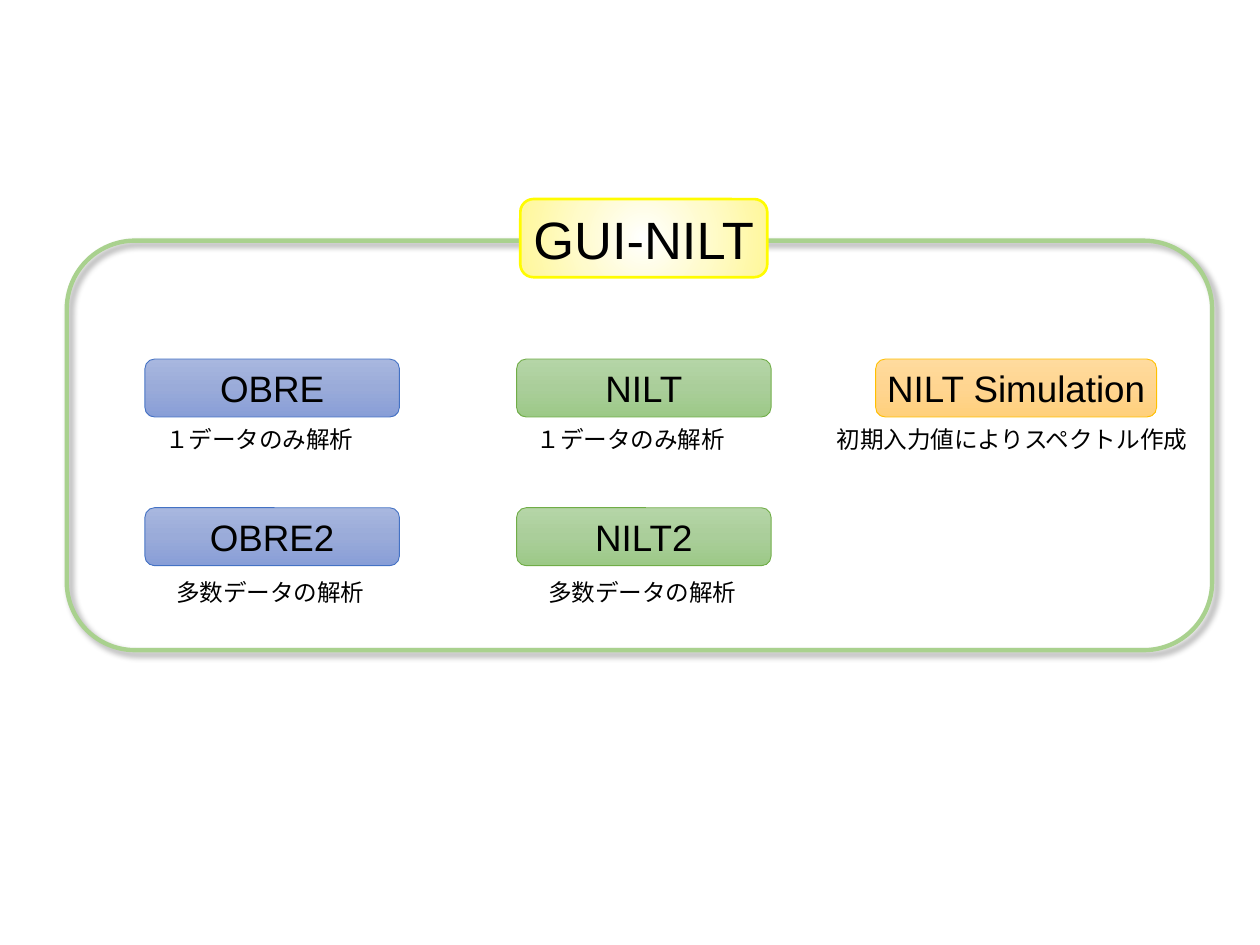
from pptx import Presentation
from pptx.dml.color import RGBColor
from pptx.enum.shapes import MSO_SHAPE
from pptx.enum.text import MSO_ANCHOR, PP_ALIGN
from pptx.oxml import parse_xml
from pptx.oxml.ns import nsdecls, qn
from pptx.util import Inches, Pt

BLACK = RGBColor(0x00, 0x00, 0x00)
FRAME_GREEN = RGBColor(0xA9, 0xD1, 0x8E)
TITLE_LINE = RGBColor(0xFF, 0xFC, 0x00)
TITLE_FILL = [RGBColor.from_string(c) for c in ("FFFFFF", "FFFBCC", "FFF799")]

# Outline colour and gradient of each family of modules
BLUE_STYLE = (RGBColor(0x44, 0x72, 0xC4),
              [RGBColor.from_string(c) for c in ("A8B7DF", "9AABD9", "889ED7")])
GREEN_STYLE = (RGBColor(0x70, 0xAD, 0x47),
               [RGBColor.from_string(c) for c in ("B5D5A7", "AACE9A", "9CC987")])
ORANGE_STYLE = (RGBColor(0xFF, 0xC0, 0x00),
                [RGBColor.from_string(c) for c in ("FFDB9E", "FFD590", "FFD07C")])

# Content
TITLE = "GUI-NILT"
SINGLE = "１データのみ解析"
MULTIPLE = "多数データの解析"
SIMULATED = "初期入力値によりスペクトル作成"
# (column, row, name, note)
MODULES = [
    (0, 0, "OBRE", SINGLE),
    (0, 1, "OBRE2", MULTIPLE),
    (1, 0, "NILT", SINGLE),
    (1, 1, "NILT2", MULTIPLE),
    (2, 0, "NILT Simulation", SIMULATED),
]

# Grid in inches: (left, box width, note width, style) and (top, note top)
COLUMNS = [(1.15, 2.02, 1.51, BLUE_STYLE),
           (4.10, 2.02, 1.51, GREEN_STYLE),
           (6.95, 2.23, 2.84, ORANGE_STYLE)]
ROWS = [(2.85, 3.34), (4.03, 4.56)]
NOTE_SHIFT = {SINGLE: 0.16, MULTIPLE: 0.25, SIMULATED: -0.31}
BOX_HEIGHT, NOTE_HEIGHT, INSET = 0.46, 0.26, 0.03

LINEAR = '<a:lin ang="5400000" scaled="0"/>'
RADIAL = ('<a:path path="circle"><a:fillToRect l="50000" t="50000" '
          'r="50000" b="50000"/></a:path>')

prs = Presentation()
prs.slide_width, prs.slide_height = Inches(10), Inches(7.5)
slide = prs.slides.add_slide(prs.slide_layouts[6])


def add_rounded(left, top, width, height, line_color, line_width):
    shape = slide.shapes.add_shape(MSO_SHAPE.ROUNDED_RECTANGLE,
                                   *map(Inches, (left, top, width, height)))
    shape.shadow.inherit = False
    shape.fill.background()
    shape.line.color.rgb = line_color
    shape.line.width = Pt(line_width)
    return shape


def set_gradient(shape, colors, direction):
    stops = "".join(f'<a:gs pos="{i * 50000}"><a:srgbClr val="{color}"/></a:gs>'
                    for i, color in enumerate(colors))
    shape.fill.gradient()
    old = shape.element.spPr.find(qn("a:gradFill"))
    new = parse_xml(f'<a:gradFill {nsdecls("a")} rotWithShape="1">'
                    f'<a:gsLst>{stops}</a:gsLst>{direction}</a:gradFill>')
    old.getparent().replace(old, new)


def set_text(shape, text, font, size, align, anchor, insets, wrap=False):
    frame = shape.text_frame
    frame.word_wrap = wrap
    frame.vertical_anchor = anchor
    (frame.margin_left, frame.margin_top,
     frame.margin_right, frame.margin_bottom) = map(Inches, insets)
    frame.text = text
    paragraph = frame.paragraphs[0]
    paragraph.alignment = align
    run_font = paragraph.runs[0].font
    run_font.name, run_font.size = font, Pt(size)
    run_font.color.rgb = BLACK
    return paragraph


# Frame with a soft shadow
group_frame = add_rounded(0.53, 1.91, 9.09, 3.25, FRAME_GREEN, 2.5)
group_frame.element.spPr.find(qn("a:effectLst")).append(parse_xml(
    f'<a:outerShdw {nsdecls("a")} blurRad="{Pt(4)}" dist="{Pt(3)}" '
    f'dir="2700000" rotWithShape="0"><a:srgbClr val="{BLACK}">'
    '<a:alpha val="40000"/></a:srgbClr></a:outerShdw>'))

# Title on the frame's upper edge
title = add_rounded(4.13, 1.58, 1.96, 0.62, TITLE_LINE, 1.5)
set_gradient(title, TITLE_FILL, RADIAL)
set_text(title, TITLE, "Arial", 30, PP_ALIGN.CENTER, MSO_ANCHOR.MIDDLE,
         [INSET] * 4).line_spacing = Pt(36)

# Modules, each with its note below
for column, row, name, note in MODULES:
    left, width, note_width, (outline, gradient) = COLUMNS[column]
    top, note_top = ROWS[row]
    module = add_rounded(left, top, width, BOX_HEIGHT, outline, 0.5)
    set_gradient(module, gradient, LINEAR)
    set_text(module, name, "Arial", 21, PP_ALIGN.CENTER, MSO_ANCHOR.MIDDLE,
             [INSET] * 4, wrap=column < 2)
    caption = slide.shapes.add_textbox(
        *map(Inches, (left + NOTE_SHIFT[note], note_top, note_width, NOTE_HEIGHT)))
    set_text(caption, note, "Lato", 13.5, PP_ALIGN.LEFT, MSO_ANCHOR.TOP,
             (0, INSET, 0, 0))

prs.save("out.pptx")
